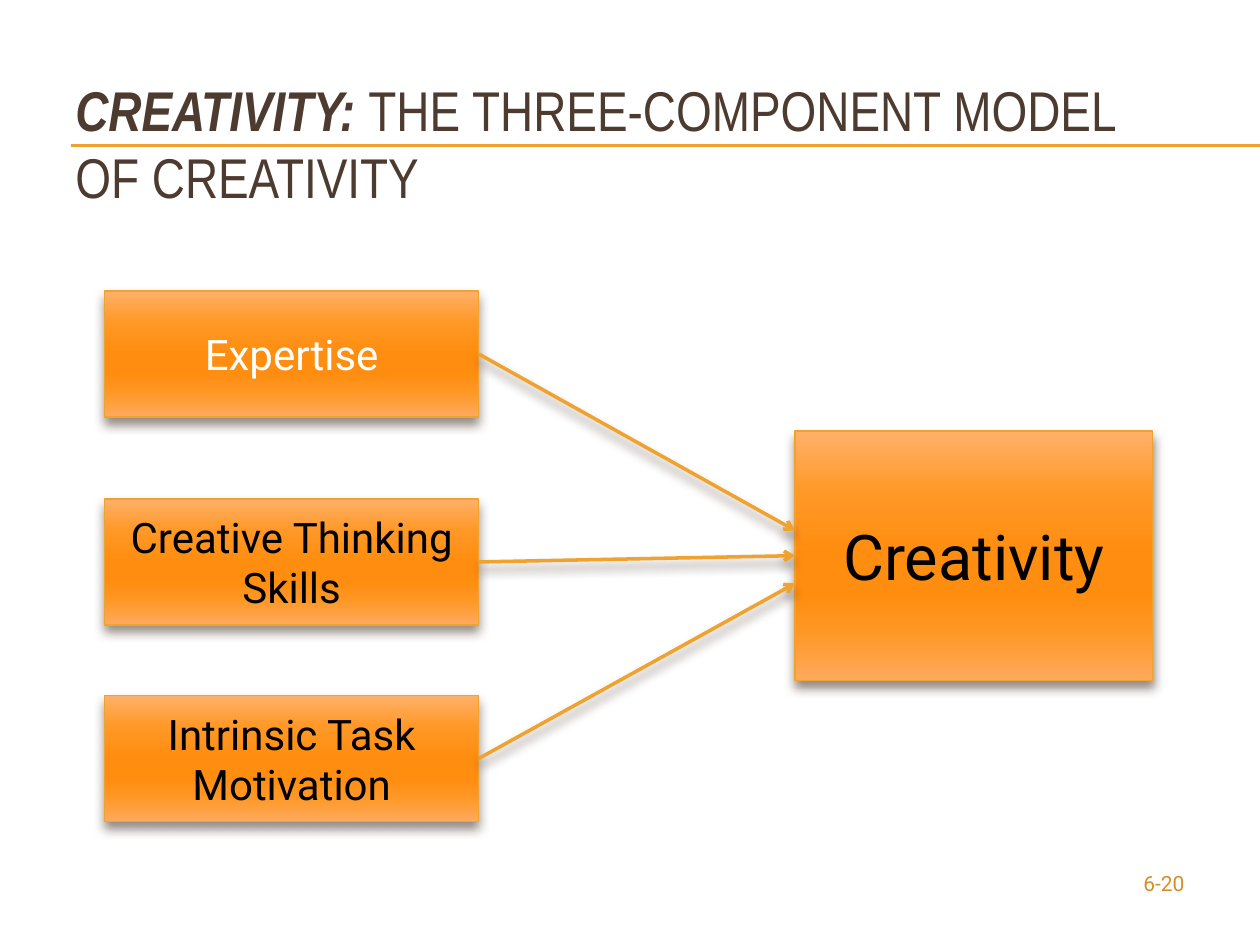
from lxml import etree
from pptx import Presentation
from pptx.dml.color import RGBColor
from pptx.enum.shapes import MSO_CONNECTOR, MSO_SHAPE
from pptx.enum.text import MSO_ANCHOR, PP_ALIGN
from pptx.oxml import parse_xml
from pptx.oxml.ns import qn
from pptx.util import Inches, Pt

STRAIGHT = MSO_CONNECTOR.STRAIGHT
RECTANGLE = MSO_SHAPE.RECTANGLE
MIDDLE, TOP = MSO_ANCHOR.MIDDLE, MSO_ANCHOR.TOP
LEFT, CENTER, RIGHT = PP_ALIGN.LEFT, PP_ALIGN.CENTER, PP_ALIGN.RIGHT
NAMESPACE = 'xmlns:a="http://schemas.openxmlformats.org/drawingml/2006/main"'

# Content
TITLE = [("CREATIVITY: ", True), ("THE THREE-COMPONENT MODEL OF CREATIVITY", False)]
PAGE_NUMBER = "6-20"
COMPONENTS = [  # text, top, text colour, height where its arrow ends
    ("Expertise", 2.31, "FFFFFF", 4.21),
    ("Creative Thinking Skills", 3.96, "000000", 4.41),
    ("Intrinsic Task Motivation", 5.52, "000000", 4.63),
]
RESULT = "Creativity"

# Look and layout
GOLD, BROWN, DARK_GOLD = "F0A22E", "4E3B30", "D48F29"
GRADIENT = [(0, "FFB16A"), (25, "FF9826"), (50, "FF8D0F"),
            (65, "FF8D0F"), (80, "FF9724"), (100, "FFAA5C")]
BOX_LEFT, BOX_WIDTH, BOX_HEIGHT = 0.83, 2.97, 1
RESULT_LEFT = 6.31
RULE_LEFT, RULE_TOPS = 0.56, (1.15, 1.16)


def color(value):
    return RGBColor.from_string(value)


def add_shadow(shape):
    shape._element.spPr.append(parse_xml(
        f'<a:effectLst {NAMESPACE}><a:outerShdw blurRad="{Pt(6)}" dist="{Pt(4)}" '
        f'dir="5400000" algn="ctr" rotWithShape="0"><a:srgbClr val="{BROWN}">'
        '<a:alpha val="60000"/></a:srgbClr></a:outerShdw></a:effectLst>'))


def set_text(shape, runs, size, font_name, text_color, align, anchor):
    frame = shape.text_frame
    frame.word_wrap = True
    frame.vertical_anchor = anchor
    paragraph = frame.paragraphs[0]
    paragraph.alignment = align
    font = paragraph.font
    font.size, font.name = Pt(size), font_name
    font.color.rgb = color(text_color)
    for text, emphasis in runs:
        run = paragraph.add_run()
        run.text = text
        if emphasis:
            run.font.bold = run.font.italic = True


def add_text(slide, bounds, *text_style):
    shape = slide.shapes.add_textbox(*map(Inches, bounds))
    set_text(shape, *text_style)


def add_box(slide, bounds, text, size, text_color):
    shape = slide.shapes.add_shape(RECTANGLE, *map(Inches, bounds))
    stops = "".join(f'<a:gs pos="{position * 1000}"><a:srgbClr val="{value}"/></a:gs>'
                    for position, value in GRADIENT)
    shape._element.spPr.find(qn("a:prstGeom")).addnext(parse_xml(
        f'<a:gradFill {NAMESPACE} rotWithShape="1"><a:gsLst>{stops}</a:gsLst>'
        '<a:lin ang="5400000" scaled="0"/></a:gradFill>'))
    shape.line.color.rgb = color(GOLD)
    shape.line.width = Pt(0.79)
    add_shadow(shape)
    set_text(shape, [(text, False)], size, "Roboto", text_color, CENTER, MIDDLE)


def add_line(slide, start, end, width, arrow=False):
    line = slide.shapes.add_connector(STRAIGHT, *map(Inches, (*start, *end)))
    line.line.color.rgb = color(GOLD)
    line.line.width = Pt(width)
    if arrow:
        etree.SubElement(line.line._get_or_add_ln(), qn("a:tailEnd"), type="arrow")
        add_shadow(line)
    else:
        etree.SubElement(line._element.spPr, qn("a:effectLst"))


def main():
    presentation = Presentation()
    presentation.slide_width, presentation.slide_height = Inches(10), Inches(7.5)
    slide = presentation.slides.add_slide(presentation.slide_layouts[6])

    # Rules behind the title, title and page number
    for top in RULE_TOPS:
        add_line(slide, (RULE_LEFT, top), (10, top), 0.75)
    add_text(slide, (0.5, 0.35, 9, 1.57), TITLE, 32, "Arial Narrow", BROWN, LEFT, MIDDLE)
    add_text(slide, (8.83, 6.86, 0.67, 0.4), [(PAGE_NUMBER, False)],
             12, "Roboto", DARK_GOLD, RIGHT, TOP)

    # Components and the result they lead to
    for text, top, text_color, _ in COMPONENTS:
        add_box(slide, (BOX_LEFT, top, BOX_WIDTH, BOX_HEIGHT), text, 24, text_color)
    add_box(slide, (RESULT_LEFT, 3.42, 2.84, 1.98), RESULT, 36, "000000")

    # Arrows from the middle of each component to the result
    for _, top, _, end in COMPONENTS:
        add_line(slide, (BOX_LEFT + BOX_WIDTH, top + BOX_HEIGHT / 2),
                 (RESULT_LEFT, end), 2, arrow=True)

    presentation.save("out.pptx")


if __name__ == "__main__":
    main()
